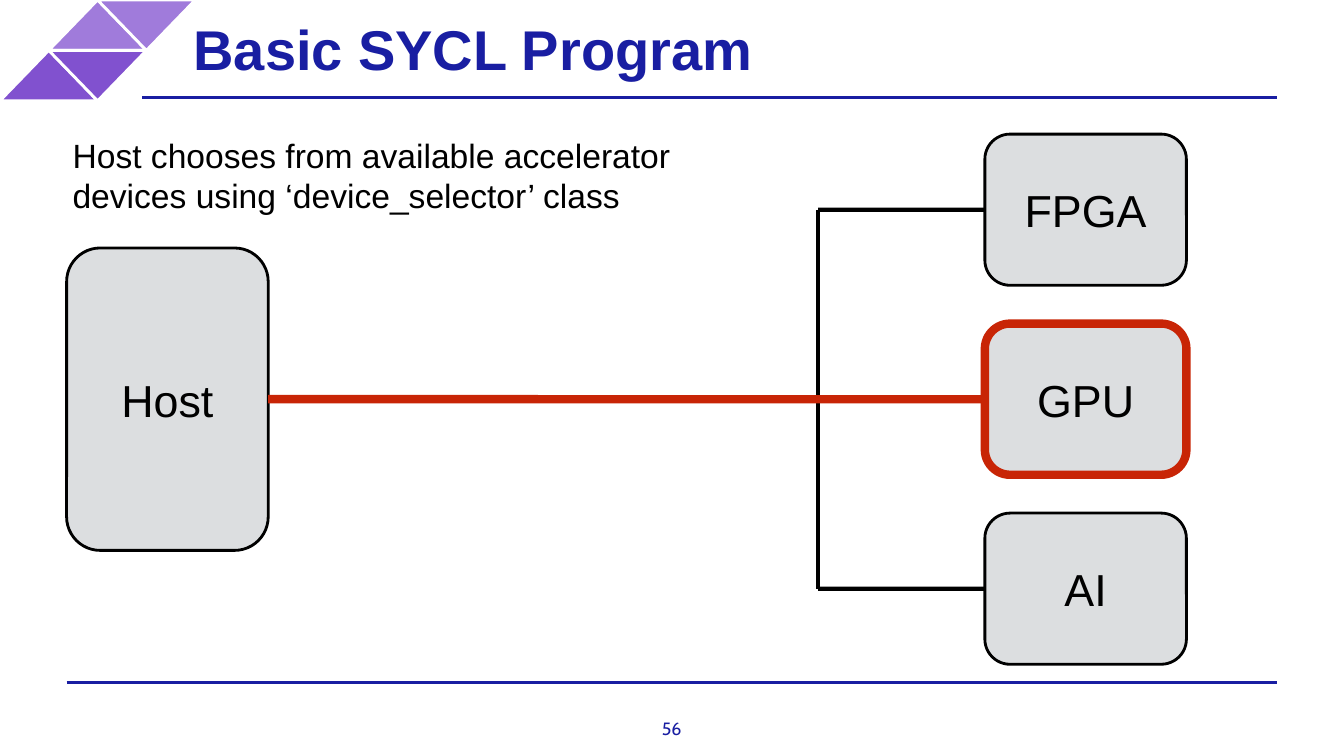
from lxml import etree
from pptx import Presentation
from pptx.dml.color import RGBColor
from pptx.enum.shapes import MSO_CONNECTOR as Link, MSO_SHAPE as Form
from pptx.enum.text import MSO_ANCHOR as Anchor, PP_ALIGN as Align
from pptx.oxml.ns import qn
from pptx.util import Cm, Pt

NAVY = RGBColor(0x19, 0x1E, 0xA2)
LILAC = RGBColor(0xA0, 0x7B, 0xDB)
PURPLE = RGBColor(0x81, 0x51, 0xCF)
GREY = RGBColor(0xDC, 0xDE, 0xE0)
RED = RGBColor(0xC8, 0x25, 0x06)
BLACK = RGBColor(0, 0, 0)
WHITE = RGBColor(0xFF, 0xFF, 0xFF)


def write(shape, text, size=32, font="Arial", color=BLACK, bold=False,
          align=Align.CENTER, anchor=Anchor.MIDDLE, inset=0.15):
    frame = shape.text_frame
    frame.word_wrap = True
    frame.vertical_anchor = anchor
    frame.margin_left = frame.margin_right = Cm(inset)
    frame.margin_top = frame.margin_bottom = Cm(inset)
    para = frame.paragraphs[0]
    para.alignment = align
    run = para.add_run()
    run.text = text
    run.font.size, run.font.name, run.font.bold = Pt(size), font, bold
    run.font.color.rgb = color


def add_text(slide, box, text, **style):
    write(slide.shapes.add_textbox(*map(Cm, box)), text, **style)


def add_form(slide, form, box, fill, edge, width=2):
    shape = slide.shapes.add_shape(form, *map(Cm, box))
    shape.shadow.inherit = False
    shape.fill.solid()
    shape.fill.fore_color.rgb = fill
    shape.line.color.rgb = edge
    shape.line.width = Pt(width)
    return shape


def add_line(slide, x1, y1, x2, y2, color=BLACK, width=3):
    line = slide.shapes.add_connector(Link.STRAIGHT, *map(Cm, (x1, y1, x2, y2)))
    line.line.color.rgb = color
    line.line.width = Pt(width)
    etree.SubElement(line._element.spPr, qn("a:effectLst"))
    return line


def add_node(slide, box, name, edge=BLACK, width=2):
    node = add_form(slide, Form.ROUNDED_RECTANGLE, box, GREY, edge, width)
    write(node, name)
    return node


def draw_corner(slide, box):
    # Two rows of triangles, each row an upright and an inverted one
    left, top, width, height = box
    step, row = width / 4, height / 2
    for r, fill in enumerate((LILAC, PURPLE)):
        for i in range(2):
            x = left + step * (1 - r + i)
            part = add_form(slide, Form.ISOSCELES_TRIANGLE,
                            (x, top + r * row, 2 * step, row), fill, WHITE)
            part.rotation = 180 * i


def draw_head(slide, box):
    left, top, width, height = box
    draw_corner(slide, (left, top, 4.92, 2.54))
    add_line(slide, left + 3.58, top + height, left + width, top + height, NAVY, 2)
    add_text(slide, (left + 4.52, top, 20.29, 2.41), "Basic SYCL Program",
             size=40, color=NAVY, bold=True, align=Align.LEFT, inset=0.36)


def draw_foot(slide, box):
    # Rule with the page number centred below it
    left, top, width, height = box
    wide, high = 1.5, 0.53
    add_line(slide, left, top, left + width, top, NAVY, 2)
    add_text(slide, (left + (width - wide) / 2, top + height - high, wide, high),
             "56", size=12.7, font="Cabin", color=NAVY, anchor=Anchor.TOP, inset=0)


def draw_map(slide, box):
    left, top, width, height = box
    wide, tall, high = 5.08, 3.81, 7.62
    mid = top + height / 2
    right = left + width - wide
    bus = right - 4.2
    step = (height - tall) / 2

    # Host and devices
    host = add_node(slide, (left, mid - high / 2, wide, high), "Host")
    nodes = []
    for i, name in enumerate(("FPGA", "GPU", "AI")):
        style = {"edge": RED, "width": 6} if name == "GPU" else {}
        nodes.append(add_node(slide, (right, top + i * step, wide, tall), name, **style))

    # Bus with its branches
    add_line(slide, bus, mid - step, bus, mid + step)
    for node, y in ((nodes[0], mid - step), (nodes[2], mid + step)):
        add_line(slide, right, y, bus, y).begin_connect(node, 1)

    # Chosen route
    route = add_line(slide, left + wide, mid, right, mid, RED, 6)
    route.begin_connect(host, 3)
    route.end_connect(nodes[1], 1)


def main():
    deck = Presentation()
    deck.slide_width, deck.slide_height = Cm(33.87), Cm(19.05)
    slide = deck.slides.add_slide(deck.slide_layouts[6])
    draw_head(slide, (0, 0, 32.18, 2.46))
    draw_foot(slide, (1.68, 17.2, 30.5, 1.41))
    add_text(slide, (1.68, 3.25, 15.37, 2.34),
             "Host chooses from available accelerator devices "
             "using ‘device_selector’ class", size=24, align=Align.LEFT)
    draw_map(slide, (1.68, 3.38, 28.22, 13.36))
    deck.save("out.pptx")


if __name__ == "__main__":
    main()
